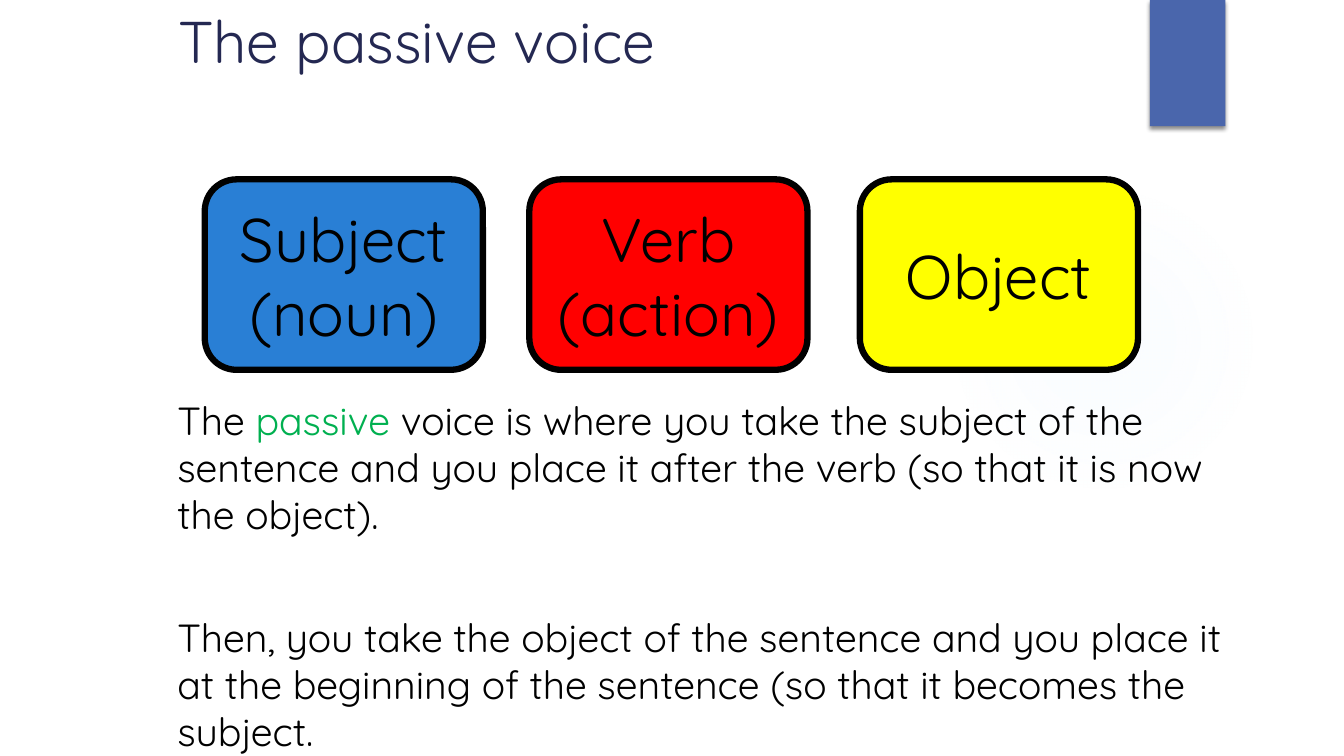
"""Builds a slide that explains the passive voice."""
from lxml import etree
from pptx import Presentation
from pptx.dml.color import RGBColor
from pptx.enum.shapes import MSO_SHAPE
from pptx.enum.text import MSO_ANCHOR, PP_ALIGN
from pptx.oxml.ns import qn
from pptx.util import Cm, Pt

RECTANGLE = MSO_SHAPE.RECTANGLE
ROUNDED = MSO_SHAPE.ROUNDED_RECTANGLE
ELLIPSE = MSO_SHAPE.OVAL
TOP, MIDDLE = MSO_ANCHOR.TOP, MSO_ANCHOR.MIDDLE
LEFT, CENTER = PP_ALIGN.LEFT, PP_ALIGN.CENTER

BLACK, GREEN, NAVY = "000000", "00B050", "242852"
GLOW_STOPS = [(0, 7), (36, 6), (69, 0)]
WORD_CARDS = [
    (5.16, "297FD5", "Subject (noun)"),
    (13.34, "FF0000", "Verb (action)"),
    (21.67, "FFFF00", "Object"),
]
EXPLANATION = [
    [("The ", BLACK), ("passive", GREEN),
     (" voice is where you take the subject of the sentence and you place it "
      "after the verb (so that it is now the object).", BLACK)],
    [("Then, you take the object of the sentence and you place it at the "
      "beginning of the sentence (so that it becomes the subject.", BLACK)],
]


def color(value):
    """Return the colour for a hex string."""
    return RGBColor.from_string(value)


def apply_format(target, values):
    """Set each named attribute of the target."""
    for name, value in values.items():
        setattr(target, name, value)


def add_element(parent, tag, **attributes):
    """Append a drawing element with its attributes."""
    texts = {name: str(value) for name, value in attributes.items()}
    return etree.SubElement(parent, qn(f"a:{tag}"), texts)


def add_block(slide, kind, box, fill=None):
    """Add a preset shape without outline or shadow."""
    block = slide.shapes.add_shape(kind, *map(Cm, box))
    block.shadow.inherit = False
    block.line.fill.background()
    if fill:
        block.fill.solid()
        block.fill.fore_color.rgb = color(fill)
    else:
        block.fill.background()
    return block


def add_glow(slide, box, tint):
    """Add a faint round glow that fades outwards."""
    properties = add_block(slide, ELLIPSE, box).element.spPr
    gradient = etree.Element(qn("a:gradFill"), rotWithShape="1")
    stops = add_element(gradient, "gsLst")
    for position, opacity in GLOW_STOPS:
        stop = add_element(stops, "gs", pos=position * 1000)
        stop_color = add_element(stop, "srgbClr", val=tint)
        add_element(stop_color, "alpha", val=opacity * 1000)
    circle = add_element(gradient, "path", path="circle")
    add_element(circle, "fillToRect", l=50000, t=50000, r=50000, b=50000)
    properties.replace(properties.find(qn("a:noFill")), gradient)


def add_tab(slide, box, fill):
    """Add the corner tab with a soft shadow below it."""
    properties = add_block(slide, RECTANGLE, box, fill).element.spPr
    effects = properties.find(qn("a:effectLst"))
    shadow = add_element(effects, "outerShdw", blurRad=Pt(3), dist=Pt(2),
                         dir=5400000, rotWithShape=0)
    shadow_color = add_element(shadow, "srgbClr", val=BLACK)
    add_element(shadow_color, "alpha", val=45000)


def write_text(frame, paragraphs, size, anchor, alignment, gap=0):
    """Write paragraphs of coloured runs into a text frame."""
    apply_format(frame, {"word_wrap": True, "vertical_anchor": anchor})
    for index, runs in enumerate(paragraphs):
        paragraph = frame.add_paragraph() if index else frame.paragraphs[0]
        paragraph.alignment = alignment
        if index:
            paragraph.space_before = Pt(gap)
        for words, hue in runs:
            run = paragraph.add_run()
            run.text = words
            apply_format(run.font, {"name": "Quicksand", "size": Pt(size)})
            run.font.color.rgb = color(hue)


def add_text(slide, box, paragraphs, size, gap=0):
    """Add a left-aligned text box."""
    frame = slide.shapes.add_textbox(*map(Cm, box)).text_frame
    write_text(frame, paragraphs, size, TOP, LEFT, gap)


def add_word_card(slide, left, fill, label):
    """Add a rounded card that names one part of the sentence."""
    card = add_block(slide, ROUNDED, (left, 4.52, 7.01, 4.8), fill)
    card.line.color.rgb = color(BLACK)
    card.line.width = Pt(4.5)
    write_text(card.text_frame, [[(label, BLACK)]], 44, MIDDLE, CENTER)


def main():
    """Build and save the slide."""
    deck = Presentation()
    apply_format(deck, {"slide_width": Cm(33.87), "slide_height": Cm(19.05)})
    slide = deck.slides.add_slide(deck.slide_layouts[6])
    add_glow(slide, (23.9, 4.65, 7.82, 7.82), "CDE0FB")
    add_tab(slide, (28.98, 0, 1.9, 3.18), "4A66AC")
    add_text(slide, (4.24, 0, 25.4, 3.18), [[("The passive voice", NAVY)]], 42)
    add_text(slide, (4.22, 9.86, 27.97, 7.72), EXPLANATION, 28, gap=54)
    for left, fill, label in WORD_CARDS:
        add_word_card(slide, left, fill, label)
    deck.save("out.pptx")


if __name__ == "__main__":
    main()
